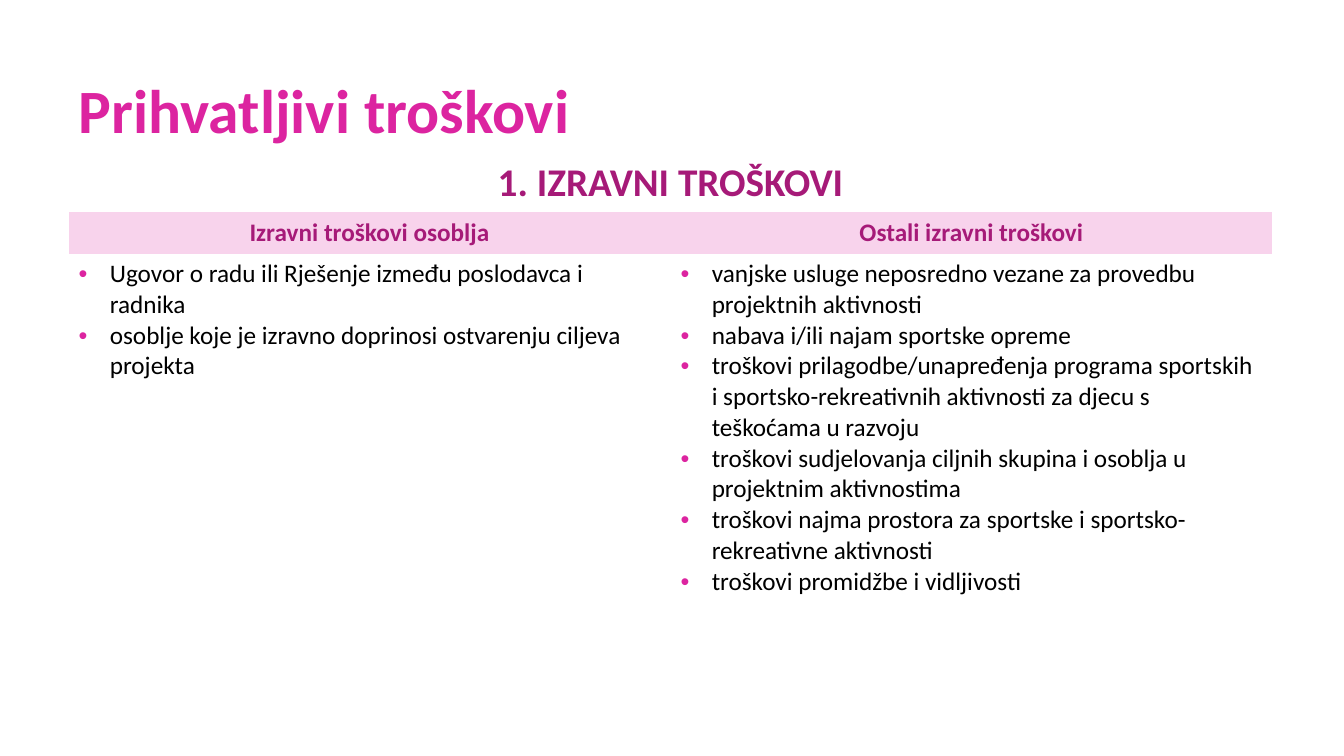
"""Build the slide on eligible direct costs."""
from dataclasses import dataclass

from lxml import etree
from pptx import Presentation
from pptx import util as u
from pptx.dml.color import RGBColor
from pptx.enum import text
from pptx.oxml import ns


@dataclass(frozen=True)
class Theme:
    font: str = "Calibri"
    pink: str = "DC24A0"
    plum: str = "A61A78"
    blush: str = "F8D3EC"
    black: str = "000000"
    title_size: int = 44
    heading_size: int = 28
    body_size: int = 18
    indent: float = 0.31
    plain_table: str = "{2D5ABB26-0587-4C30-8999-92F81FD0307C}"


@dataclass(frozen=True)
class CostGroup:
    name: str
    items: tuple[str, ...]


THEME = Theme()
TITLE = "Prihvatljivi troškovi"
HEADING = "1. IZRAVNI TROŠKOVI"
GROUPS = (
    CostGroup("Izravni troškovi osoblja", (
        "Ugovor o radu ili Rješenje između poslodavca i radnika",
        "osoblje koje je izravno doprinosi ostvarenju ciljeva projekta",
    )),
    CostGroup("Ostali izravni troškovi", (
        "vanjske usluge neposredno vezane za provedbu projektnih aktivnosti",
        "nabava i/ili najam sportske opreme",
        "troškovi prilagodbe/unapređenja programa sportskih i "
        "sportsko-rekreativnih aktivnosti za djecu s teškoćama u razvoju",
        "troškovi sudjelovanja ciljnih skupina i osoblja u projektnim aktivnostima",
        "troškovi najma prostora za sportske i sportsko-rekreativne aktivnosti",
        "troškovi promidžbe i vidljivosti",
    )),
)
ROW_HEIGHTS = (0.57, 0.41, 3.69)
COLUMN_WIDTH = 5.97


def style_runs(p, size: int, color: str, bold: bool) -> None:
    for r in p.runs:
        r.font.name = THEME.font
        r.font.size = u.Pt(size)
        r.font.bold = bold
        r.font.color.rgb = RGBColor.from_string(color)


def add_bullet(p) -> None:
    pPr = p._p.get_or_add_pPr()
    indent = u.Inches(THEME.indent)
    pPr.set("marL", str(indent))
    pPr.set("indent", str(-indent))
    color = etree.SubElement(pPr, ns.qn("a:buClr"))
    etree.SubElement(color, ns.qn("a:srgbClr"), val=THEME.pink)
    etree.SubElement(pPr, ns.qn("a:buFont"), typeface="Arial")
    etree.SubElement(pPr, ns.qn("a:buChar"), char="•")


def fill_header(cell, label: str, size: int) -> None:
    cell.text_frame.text = label
    p = cell.text_frame.paragraphs[0]
    p.alignment = text.PP_ALIGN.CENTER
    style_runs(p, size, THEME.plum, True)


def fill_list(cell, items: tuple[str, ...]) -> None:
    tf = cell.text_frame
    tf.text = "\n".join(items)
    for p in tf.paragraphs:
        add_bullet(p)
        style_runs(p, THEME.body_size, THEME.black, False)


def add_title(s) -> None:
    sp = s.shapes.title
    sp.left, sp.top, sp.width, sp.height = map(u.Inches, (0.68, 0.4, 10.57, 1.45))
    tf = sp.text_frame
    tf.text = TITLE
    tf.word_wrap = True
    tf.vertical_anchor = text.MSO_ANCHOR.MIDDLE
    p = tf.paragraphs[0]
    p.alignment = text.PP_ALIGN.LEFT
    p.line_spacing = 0.9
    style_runs(p, THEME.title_size, THEME.pink, True)


def add_cost_table(s) -> None:
    box = (0.68, 1.53, COLUMN_WIDTH * len(GROUPS), sum(ROW_HEIGHTS))
    table = s.shapes.add_table(
        len(ROW_HEIGHTS), len(GROUPS), *map(u.Inches, box)).table
    table.first_row = table.horz_banding = False
    table._tbl.tblPr.find(ns.qn("a:tableStyleId")).text = THEME.plain_table
    for row, height in zip(table.rows, ROW_HEIGHTS):
        row.height = u.Inches(height)
    for column in table.columns:
        column.width = u.Inches(COLUMN_WIDTH)
    for cell in table.iter_cells():
        cell.fill.background()
    table.cell(0, 0).merge(table.cell(0, len(GROUPS) - 1))
    fill_header(table.cell(0, 0), HEADING, THEME.heading_size)
    for col, group in enumerate(GROUPS):
        header = table.cell(1, col)
        header.fill.solid()
        header.fill.fore_color.rgb = RGBColor.from_string(THEME.blush)
        fill_header(header, group.name, THEME.body_size)
        fill_list(table.cell(2, col), group.items)


def main() -> None:
    prs = Presentation()
    prs.slide_width, prs.slide_height = u.Inches(13.33), u.Inches(7.5)
    s = prs.slides.add_slide(prs.slide_layouts.get_by_name("Title Only"))
    add_title(s)
    add_cost_table(s)
    prs.save("out.pptx")


if __name__ == "__main__":
    main()
